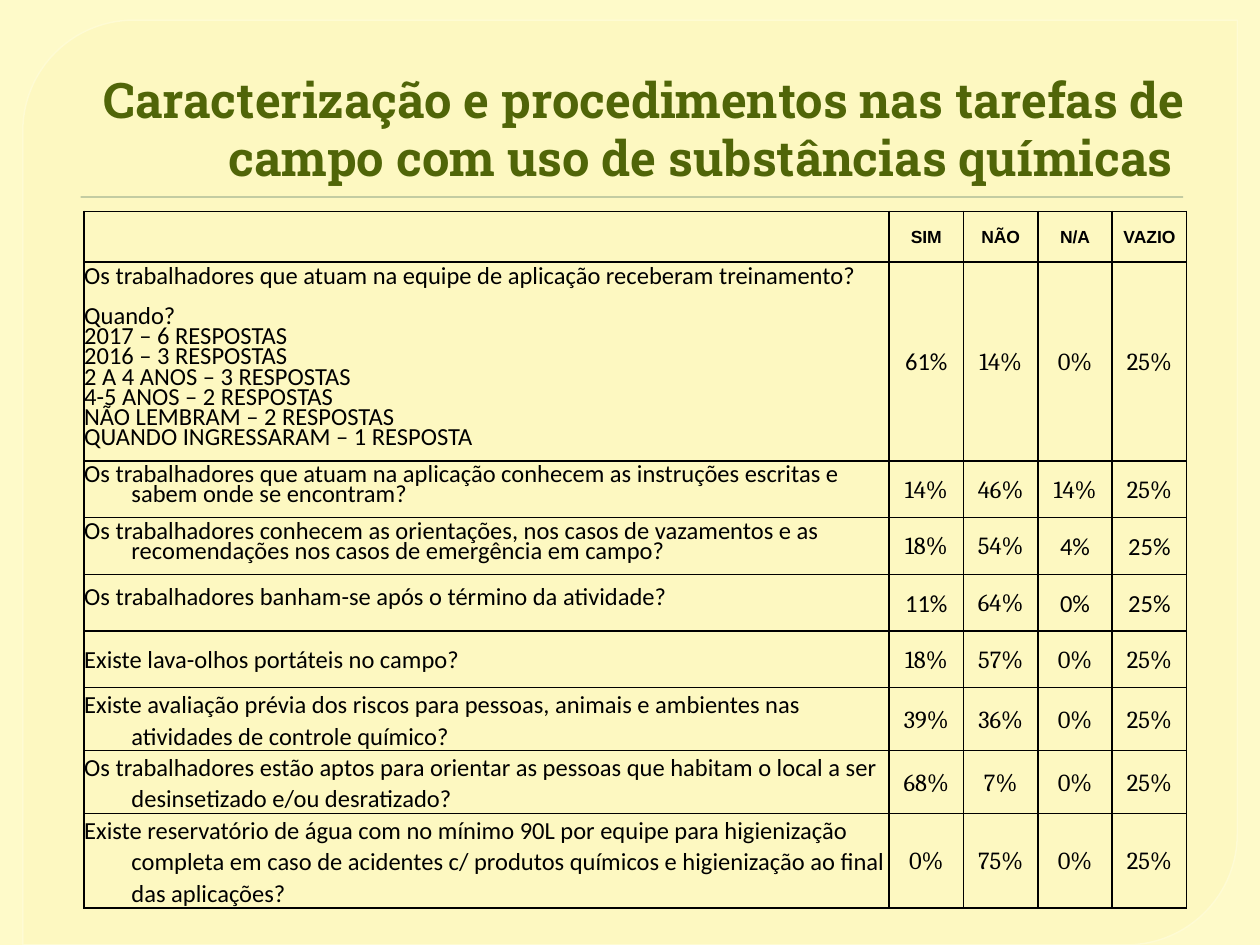
"""Builds the slide on field procedures with chemical substances."""
from lxml import etree
from pptx import Presentation, util as u
from pptx.dml.color import RGBColor
from pptx.enum import shapes, text
from pptx.oxml import ns

TITLE = "Caracterização e procedimentos nas tarefas de campo com uso de substâncias químicas "
HEADINGS = ["SIM", "NÃO", "N/A", "VAZIO"]
TRAINING_ANSWERS = [
    "Quando?",
    "2017 – 6 RESPOSTAS",
    "2016 – 3 RESPOSTAS",
    "2 A 4 ANOS – 3 RESPOSTAS",
    "4-5 ANOS – 2 RESPOSTAS",
    "NÃO LEMBRAM – 2 RESPOSTAS",
    "QUANDO INGRESSARAM – 1 RESPOSTA",
]
QUESTIONS = [
    ("Os trabalhadores que atuam na equipe de aplicação receberam treinamento?",
     u.Pt(11.5), 0, [61, 14, 0, 25]),
    ("Os trabalhadores que atuam na aplicação conhecem as instruções escritas e sabem onde se encontram?",
     u.Pt(11.5), 0, [14, 46, 14, 25]),
    ("Os trabalhadores conhecem as orientações, nos casos de vazamentos e as recomendações nos casos de "
     "emergência em campo?", u.Pt(11.4), 0.1, [18, 54, 4, 25]),
    ("Os trabalhadores banham-se após o término da atividade?", u.Pt(11.2), 0.8, [11, 64, 0, 25]),
    ("Existe lava-olhos portáteis no campo?", 1.07, 0.6, [18, 57, 0, 25]),
    ("Existe avaliação prévia dos riscos para pessoas, animais e ambientes nas atividades de controle químico?",
     1.07, 0.6, [39, 36, 0, 25]),
    ("Os trabalhadores estão aptos para orientar as pessoas que habitam o local a ser desinsetizado e/ou "
     "desratizado?", 1.07, 0.6, [68, 7, 0, 25]),
    ("Existe reservatório de água com no mínimo 90L por equipe para higienização completa em caso de acidentes "
     "c/ produtos químicos e higienização ao final das aplicações?", 1.07, 0.6, [0, 75, 0, 25]),
]
CALIBRI_VALUES = {(1, 1), (3, 3), (3, 4), (4, 1), (4, 3), (4, 4)}
COLUMN_WIDTHS = [460] + [42.5] * 4
ROW_HEIGHTS = [28.8, 113.8] + [32.4] * 6 + [47.5]


def color(value):
    return RGBColor.from_string(value)


def box(left, top, width, height):
    return [u.Pt(n) for n in (left, top, width, height)]


def set_alpha(fill, percent):
    target = fill._xPr.find(".//" + ns.qn("a:srgbClr"))
    etree.SubElement(target, ns.qn("a:alpha")).set("val", str(percent * 1000))


def write(paragraph, words, font, size, bold=False, ink="000000", align=None,
          margin=0, hanging=0, spacing=None, before=0):
    props = paragraph._p.get_or_add_pPr()
    props.set("marL", str(u.Pt(margin)))
    props.set("indent", str(u.Pt(-hanging)))
    paragraph.alignment = align
    paragraph.line_spacing = spacing
    paragraph.space_before = u.Pt(before)
    run = paragraph.add_run()
    run.text = words
    run.font.name, run.font.size, run.font.bold = font, u.Pt(size), bold
    run.font.color.rgb = color(ink)


def format_cell(cell):
    cell.fill.background()
    cell.vertical_anchor = text.MSO_ANCHOR.MIDDLE
    cell.margin_left = cell.margin_right = cell.margin_top = cell.margin_bottom = 0
    props = cell._tc.get_or_add_tcPr()
    for place, side in enumerate(("a:lnL", "a:lnR", "a:lnT", "a:lnB")):
        border = etree.Element(ns.qn(side), w=str(u.Pt(1)))
        ink = etree.SubElement(border, ns.qn("a:solidFill"))
        etree.SubElement(ink, ns.qn("a:srgbClr"), val="000000")
        props.insert(place, border)


def write_centred(cell, words, font, size, bold=False):
    write(cell.text_frame.paragraphs[0], words, font, size, bold, align=text.PP_ALIGN.CENTER,
          margin=18, hanging=18, spacing=1.07)


def add_backdrop(slide):
    slide.background.fill.solid()
    slide.background.fill.fore_color.rgb = color("FEFAC9")
    panel = slide.shapes.add_shape(shapes.MSO_SHAPE.ROUND_2_DIAG_RECTANGLE, *box(13, 11.5, 694, 528.5))
    panel.adjustments[0], panel.adjustments[1] = 0.12, 0
    rule = slide.shapes.add_shape(shapes.MSO_SHAPE.RECTANGLE, *box(46.1, 112.2, 630, 0.7))
    for part, ink in ((panel, "FDF8BE"), (rule, "A5B592")):
        part.shadow.inherit = False
        part.fill.solid()
        part.fill.fore_color.rgb = color(ink)
    rule.line.fill.background()
    panel.line.color.rgb = color("FFFCD6")
    panel.line.width = u.Pt(0.87)
    set_alpha(panel.fill, 65)
    set_alpha(panel.line.fill, 88)


def add_title(slide):
    frame = slide.shapes.add_textbox(*box(36, 20.2, 648, 90)).text_frame
    frame.word_wrap = True
    frame.vertical_anchor = text.MSO_ANCHOR.BOTTOM
    write(frame.paragraphs[0], TITLE, "Roboto Slab", 28, True, "506508", text.PP_ALIGN.RIGHT, margin=4.3)


def add_answers(slide):
    table = slide.shapes.add_table(len(ROW_HEIGHTS), len(COLUMN_WIDTHS), *box(
        48.1, 120.8, sum(COLUMN_WIDTHS), sum(ROW_HEIGHTS))).table
    table.first_row = table.horz_banding = False
    for column, width in zip(table.columns, COLUMN_WIDTHS):
        column.width = u.Pt(width)
    for row, height in zip(table.rows, ROW_HEIGHTS):
        row.height = u.Pt(height)
    for cell in table.iter_cells():
        format_cell(cell)
    for c, heading in enumerate(HEADINGS, 1):
        write_centred(table.cell(0, c), heading, "Arial", 10, True)
    for r, (question, spacing, before, values) in enumerate(QUESTIONS, 1):
        write(table.cell(r, 0).text_frame.paragraphs[0], question, "Calibri", 14,
              margin=27, hanging=27, spacing=spacing, before=before)
        for c, value in enumerate(values, 1):
            font = "Calibri" if (r, c) in CALIBRI_VALUES else "Cambria"
            write_centred(table.cell(r, c), f"{value}%", font, 14)
    training = table.cell(1, 0).text_frame
    for i, answer in enumerate(TRAINING_ANSWERS):
        write(training.add_paragraph(), answer, "Calibri", 14, margin=18, hanging=18,
              spacing=u.Pt(11.5), before=0 if i else 11.5)


def main():
    deck = Presentation()
    deck.slide_width, deck.slide_height = u.Pt(720), u.Pt(540)
    slide = deck.slides.add_slide(deck.slide_layouts[6])
    add_backdrop(slide)
    add_title(slide)
    add_answers(slide)
    deck.save("out.pptx")


if __name__ == "__main__":
    main()
